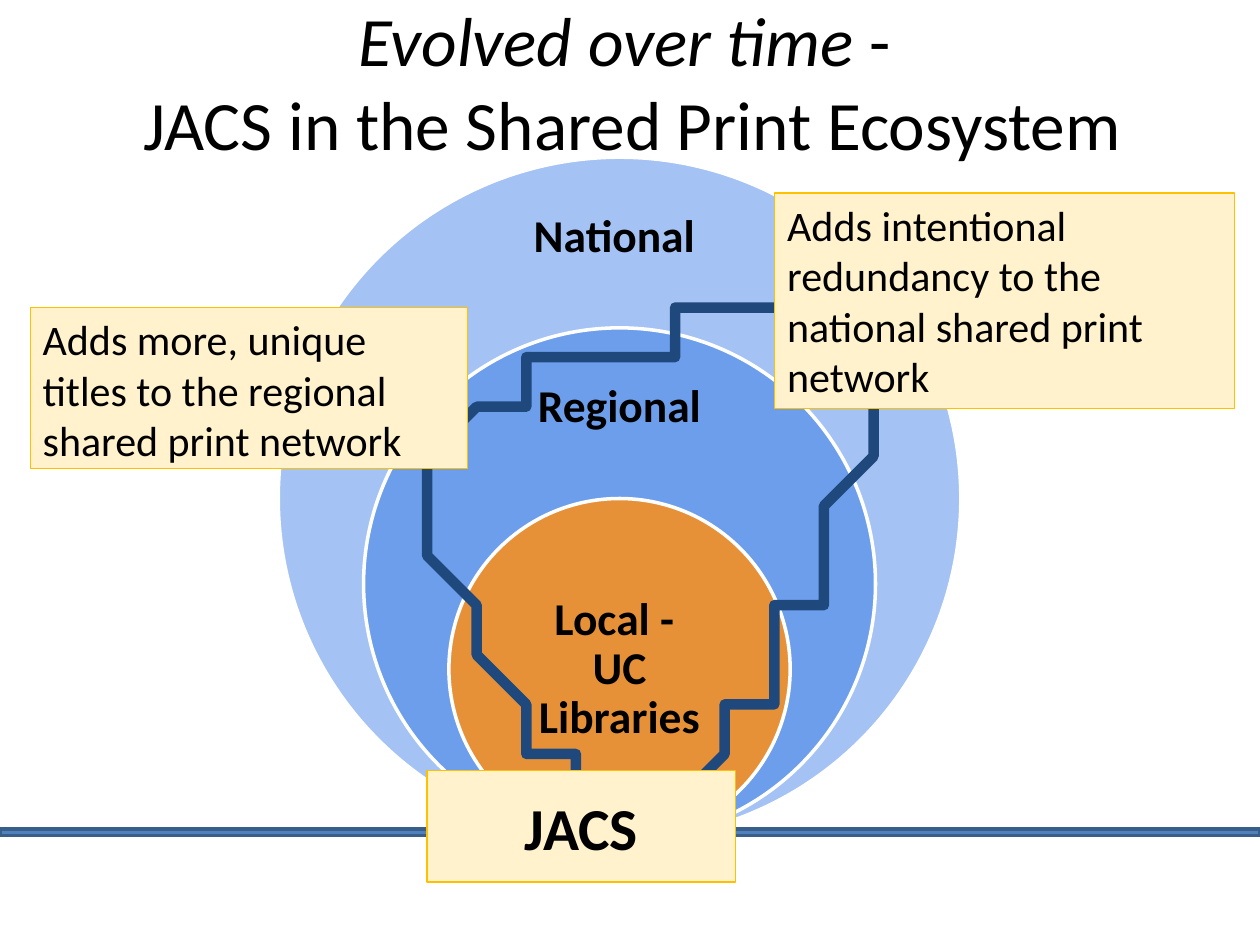
from pptx import Presentation
from pptx.dml.color import RGBColor
from pptx.enum.shapes import MSO_SHAPE
from pptx.enum.text import MSO_ANCHOR, PP_ALIGN
from pptx.util import Cm, Pt

WIDTH, HEIGHT = 25.4, 19.05
CURVE_STEPS = 24


def color(value):
    return RGBColor.from_string(value)


def write_text(shape, paragraphs, size, bold=False, align=PP_ALIGN.LEFT,
               anchor=MSO_ANCHOR.TOP, spacing=None, inset=(0.25, 0.13)):
    """Each paragraph is a list of (text, italic) runs."""
    frame = shape.text_frame
    frame.word_wrap = True
    frame.vertical_anchor = anchor
    frame.margin_left = frame.margin_right = Cm(inset[0])
    frame.margin_top = frame.margin_bottom = Cm(inset[1])
    for index, runs in enumerate(paragraphs):
        paragraph = frame.paragraphs[0] if index == 0 else frame.add_paragraph()
        paragraph.alignment = align
        paragraph.line_spacing = spacing
        for text, italic in runs:
            run = paragraph.add_run()
            run.text = text
            run.font.name = "Calibri"
            run.font.size = Pt(size)
            run.font.bold = bold
            run.font.italic = italic
            run.font.color.rgb = color("000000")


def add_filled(slide, kind, box, fill, line, line_width):
    shape = slide.shapes.add_shape(kind, *map(Cm, box))
    shape.shadow.inherit = False
    shape.fill.solid()
    shape.fill.fore_color.rgb = color(fill)
    shape.line.color.rgb = color(line)
    shape.line.width = Pt(line_width)
    return shape


def add_title(slide, box):
    title = slide.shapes.add_textbox(*map(Cm, box))
    write_text(title, [[("Evolved over time ", True), ("- ", False)],
                       [("JACS in the Shared Print Ecosystem", False)]],
               39.6, align=PP_ALIGN.CENTER, anchor=MSO_ANCHOR.MIDDLE)


def add_nested_circles(slide, left, top, diameter):
    """Circles that share their lowest point, each with a label near its top."""
    label_width = 4.86
    rings = [
        # share of the diameter, fill, label, label offset and height
        (1, "A4C2F4", ["National "], 0.6, 2.06),
        (0.75, "6D9EEB", ["Regional"], 0.65, 1.93),
        (0.5, "E69138", ["Local - ", "UC Libraries"], 1.74, 3.43),
    ]
    for share, fill, lines, offset, label_height in rings:
        size = diameter * share
        ring_top = top + diameter - size
        ring_left = left + (diameter - size) / 2
        add_filled(slide, MSO_SHAPE.OVAL, (ring_left, ring_top, size, size),
                   fill, "FFFFFF", 2)
        label = slide.shapes.add_textbox(
            Cm(left + (diameter - label_width) / 2), Cm(ring_top + offset),
            Cm(label_width), Cm(label_height))
        write_text(label, [[(line, False)] for line in lines], 26, bold=True,
                   align=PP_ALIGN.CENTER, anchor=MSO_ANCHOR.MIDDLE,
                   spacing=0.9, inset=(0.3, 0.3))


def bezier_points(start, control_1, control_2, end):
    points = []
    for step in range(1, CURVE_STEPS + 1):
        t = step / CURVE_STEPS
        weights = ((1 - t) ** 3, 3 * t * (1 - t) ** 2, 3 * t ** 2 * (1 - t), t ** 3)
        corners = (start, control_1, control_2, end)
        points.append(tuple(
            sum(weight * corner[axis] for weight, corner in zip(weights, corners))
            for axis in (0, 1)))
    return points


def add_reach_loop(slide, left, top):
    """Closed curve from JACS out to the regional and national circles."""
    start = (4.57, 10.39)
    curves = [
        ((6.1, 9.96), (9.91, 1.6), (9.17, 0.36)),
        ((8.41, -0.89), (0.86, 1.32), (0.1, 3)),
        ((-0.66, 4.67), (3.07, 10.85), start),
    ]
    points, current = [], start
    for curve in curves:
        points += bezier_points(current, *curve)
        current = curve[-1]
    builder = slide.shapes.build_freeform(*start, scale=Cm(1))
    builder.add_line_segments(points, close=True)
    loop = builder.convert_to_shape(Cm(left), Cm(top))
    loop.shadow.inherit = False
    loop.fill.background()
    loop.line.color.rgb = color("1F497D")
    loop.line.width = Pt(6)


def add_note(slide, box, text, size=24, **text_format):
    note = add_filled(slide, MSO_SHAPE.RECTANGLE, box, "FFF2CC", "FFC000", 0.75)
    write_text(note, [[(text, False)]], size, **text_format)


def main():
    presentation = Presentation()
    presentation.slide_width, presentation.slide_height = Cm(WIDTH), Cm(HEIGHT)
    slide = presentation.slides.add_slide(presentation.slide_layouts[6])

    # Ground line and title
    add_filled(slide, MSO_SHAPE.RECTANGLE, (0, 16.71, WIDTH, 0.13),
               "4F81BD", "395E89", 2)
    add_title(slide, (0.61, 0.51, 24.28, 2.24))

    # Ecosystem diagram
    add_nested_circles(slide, left=5.61, top=3.17, diameter=13.76)
    add_reach_loop(slide, left=8.61, top=6.2)

    # Notes on top of the diagram
    add_note(slide, (8.61, 15.54, 6.22, 2.24), "JACS", size=34, bold=True,
             align=PP_ALIGN.CENTER, anchor=MSO_ANCHOR.MIDDLE)
    add_note(slide, (0.61, 6.2, 8.81, 3.25),
             "Adds more, unique titles to the regional shared print network")
    add_note(slide, (15.62, 3.89, 9.27, 4.34),
             "Adds intentional redundancy to the national shared print network")

    presentation.save("out.pptx")


if __name__ == "__main__":
    main()
